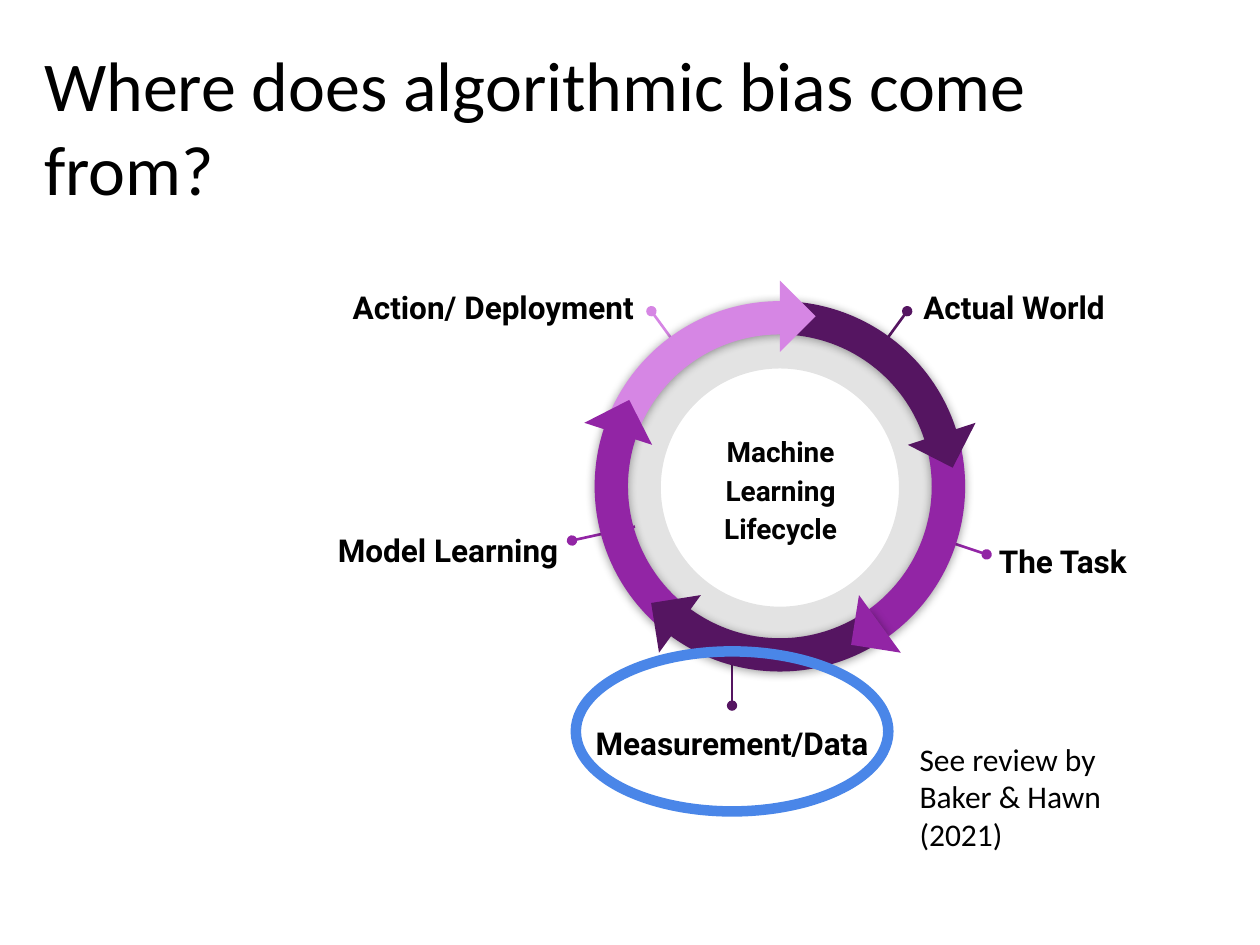
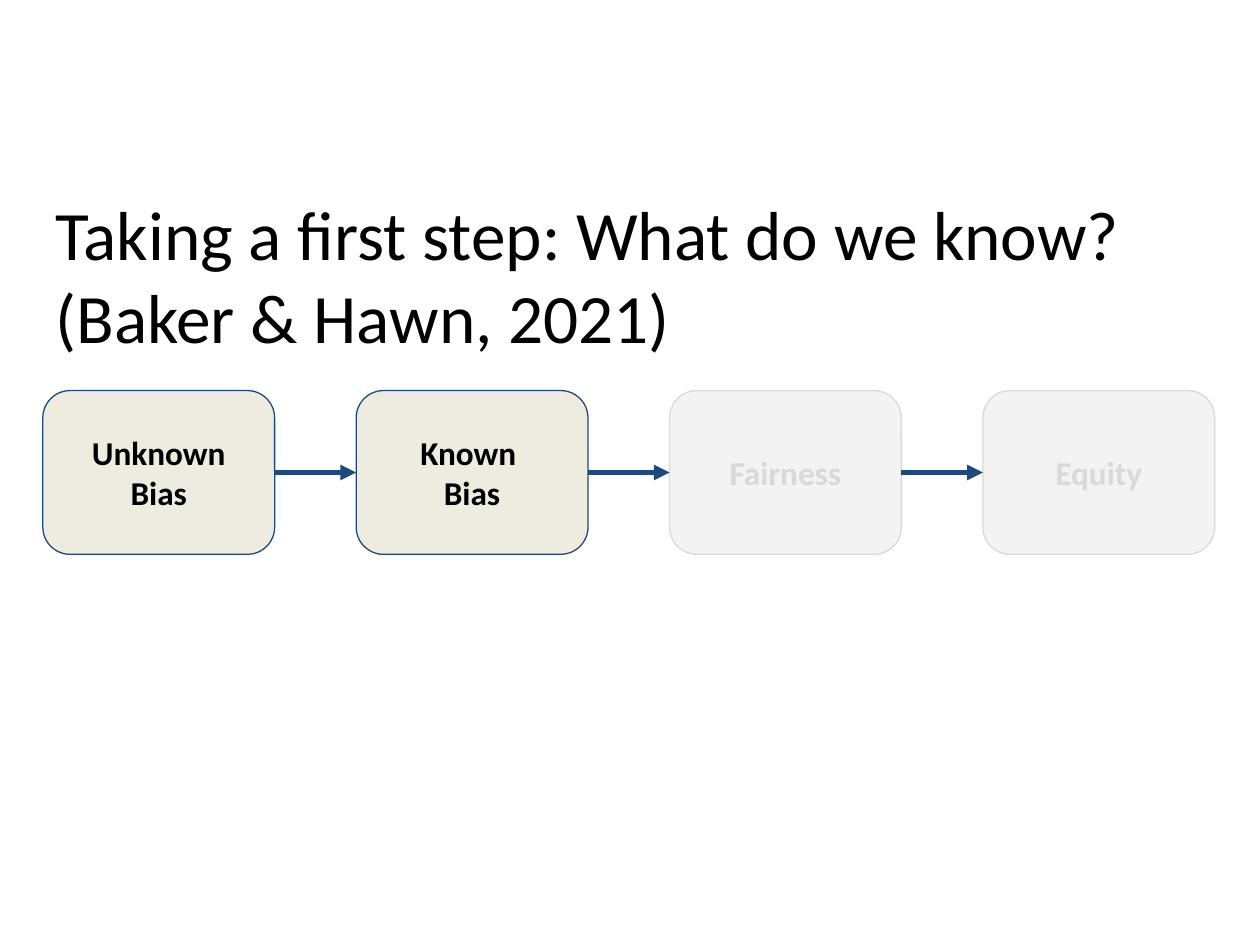
from dataclasses import dataclass
from math import cos, radians, sin

from lxml.etree import SubElement
from pptx import Presentation
from pptx.dml.color import RGBColor as RGB
from pptx.enum.shapes import MSO_CONNECTOR as Wire, MSO_SHAPE as Form
from pptx.enum.text import MSO_ANCHOR as Anchor, MSO_AUTO_SIZE as Fit, PP_ALIGN as Align
from pptx.oxml.ns import qn
from pptx.util import Inches, Pt


@dataclass(frozen=True)
class Theme:
    black: str = "000000"
    plum: str = "551561"
    violet: str = "9225A5"
    pink: str = "D686E4"
    blue: str = "4A86E8"
    navy: str = "1F497D"
    cream: str = "EEECE1"
    pale: str = "F3F3F3"
    grey: str = "D9D9D9"
    title: float = 40
    step: float = 19
    label: float = 18
    hub: float = 16


T = Theme()
deck = Presentation()
deck.slide_width, deck.slide_height = Inches(10), Inches(7.5)
CELL = deck.slide_width / 100  # grid of 100 columns by 75 rows


def box(slide, form, area, fill=None, line=None, width=0.75):
    """Add a shape, or a text box if form is None; area is in grid cells."""
    area = [round(n * CELL) for n in area]
    if form is None:
        return slide.shapes.add_textbox(*area)
    shape = slide.shapes.add_shape(form, *area)
    shape.shadow.inherit = False
    for part, tint in ((shape.fill, fill), (shape.line.fill, line)):
        if tint:
            part.solid()
            part.fore_color.rgb = RGB.from_string(tint)
        else:
            part.background()
    if line:
        shape.line.width = Pt(width)
    return shape


def write(shape, text, size, name="Calibri", bold=False, tint=T.black,
          align=Align.LEFT, anchor=Anchor.TOP, space=1.0):
    frame = shape.text_frame
    look = dict(word_wrap=True, auto_size=Fit.NONE, vertical_anchor=anchor)
    look |= {f"margin_{side}": Inches(0.1) for side in ("left", "top", "right", "bottom")}
    for key, val in look.items():
        setattr(frame, key, val)
    frame.text = text
    for para in frame.paragraphs:
        para.alignment, para.line_spacing = align, space
        for run in para.runs:
            for key, val in dict(size=Pt(size), name=name, bold=bold).items():
                setattr(run.font, key, val)
            run.font.color.rgb = RGB.from_string(tint)


# Titles
titles = [("Where does algorithmic bias come from?", 2.5, 2.3, T.title),
          ("Taking a first step: What do we know?\v(Baker & Hawn, 2021)", 3.4, 14.2, 39.6)]
slides = []
for text, left, top, size in titles:
    slide = deck.slides.add_slide(deck.slide_layouts[5])
    head = slide.shapes.title
    area = dict(left=left, top=top, width=93.2, height=6.3)
    for key, val in area.items():
        setattr(head, key, round(val * CELL))
    write(head, text, size)
    slides.append(slide)
cycle, path_on = slides
wires = []  # connector, colour, points, end tag, end type

# Cycle: grey ring, then labels with their pins
ring = box(cycle, Form.DONUT, (48, 24.8, 27.8, 27.8), T.black)
ring.adjustments[0] = 0.16
tone = ring._element.spPr.find(qn("a:solidFill"))[0]
SubElement(tone, qn("a:alpha"), val="11000")

labels = [
    ("Actual World", Align.LEFT, (72.3, 21.4, 19, 4.5), (72, 24.7, 69, 28.8), T.plum),
    ("Action/ Deployment", Align.RIGHT, (23.5, 21.4, 27.8, 5.3), (51.7, 24.7, 54.7, 28.8), T.pink),
    ("The Task", Align.LEFT, (78.3, 41.6, 16.4, 4.5), (78.3, 44, 73.5, 42.4), T.violet),
    ("Model Learning", Align.RIGHT, (25.6, 40.7, 19.7, 5.3), (45.4, 42.9, 50.4, 41.8), T.violet),
    ("Measurement/Data", Align.CENTER, (44.2, 56, 27.8, 7.3), (58.1, 56, 58.1, 50.6), T.plum),
]
for text, align, area, pin, tint in labels:
    wire = cycle.shapes.add_connector(Wire.STRAIGHT, *[round(n * CELL) for n in pin])
    wires.append((wire, tint, 1.5, "a:headEnd", "oval"))
    write(box(cycle, None, area), text, T.label, "Roboto", True, align=align, space=1.15)

# Arcs run clockwise, each up to the start of the next
MID_X, MID_Y, SPAN = 61.9, 38.6, 29.4
turns = [270, 346, 54, 127, 199]
tints = [T.plum, T.violet, T.plum, T.violet, T.pink]
for i in (0, 1, 4, 3, 2):
    arc = box(cycle, Form.BLOCK_ARC, (MID_X - SPAN / 2, MID_Y - SPAN / 2, SPAN, SPAN), tints[i])
    ends = turns[i], turns[(i + 1) % 5]
    for k, angle in enumerate(ends):
        arc.adjustments[k] = angle * 0.6  # 60000ths of a degree, over 100000
    arc.adjustments[2] = 0.09
    glow = SubElement(arc._element.spPr.find(qn("a:effectLst")), qn("a:outerShdw"),
                      blurRad=str(Pt(5.6)), dist=str(Pt(0.8)), dir="5400000",
                      algn="bl", rotWithShape="0")
    SubElement(SubElement(glow, qn("a:srgbClr"), val=T.black), qn("a:alpha"), val="40000")

# Arrowheads sit every 72 degrees on the ring
HEAD, REACH = 4, 13.5
for i, tint in enumerate(tints):
    angle = 342 + 72 * i
    x = MID_X + REACH * cos(radians(angle))
    y = MID_Y + REACH * sin(radians(angle))
    tip = box(cycle, Form.RIGHT_TRIANGLE, (x - HEAD / 2, y - HEAD / 2, HEAD, HEAD), tint)
    tip.rotation = (angle - 45) % 360

write(box(cycle, None, (52.7, 34.3, 18.5, 8.8)), "Machine Learning Lifecycle", T.hub, "Roboto",
      True, "020202", Align.CENTER, Anchor.MIDDLE, 1.15)
box(cycle, Form.OVAL, (45.7, 51.7, 24.8, 12.7), line=T.blue, width=6)
write(box(cycle, None, (72, 57.7, 20.6, 11.1)), "See review by \vBaker & Hawn (2021)", T.label)

# Steps from unknown bias to equity
live = (T.cream, T.navy, T.black)
faint = (T.pale, T.grey, T.grey)
steps = [("Unknown Bias", live), ("Known \nBias", live), ("Fairness", faint), ("Equity", faint)]
last = None
for i, (text, (fill, line, ink)) in enumerate(steps):
    step = box(path_on, Form.ROUNDED_RECTANGLE, (3.4 + 24.87 * i, 31, 18.4, 13), fill, line)
    write(step, text, T.step, bold=True, tint=ink, align=Align.CENTER, anchor=Anchor.MIDDLE)
    if last:
        wire = path_on.shapes.add_connector(Wire.STRAIGHT, 0, 0, 0, 0)
        wire.begin_connect(last, 3)
        wire.end_connect(step, 1)
        wires.append((wire, T.navy, 3, "a:tailEnd", "triangle"))
    last = step

# Line style and ends
for wire, tint, width, tag, kind in wires:
    wire.line.color.rgb = RGB.from_string(tint)
    wire.line.width = Pt(width)
    SubElement(wire.line._get_or_add_ln(), qn(tag), type=kind)
    SubElement(wire._element.spPr, qn("a:effectLst"))

deck.save("out.pptx")
